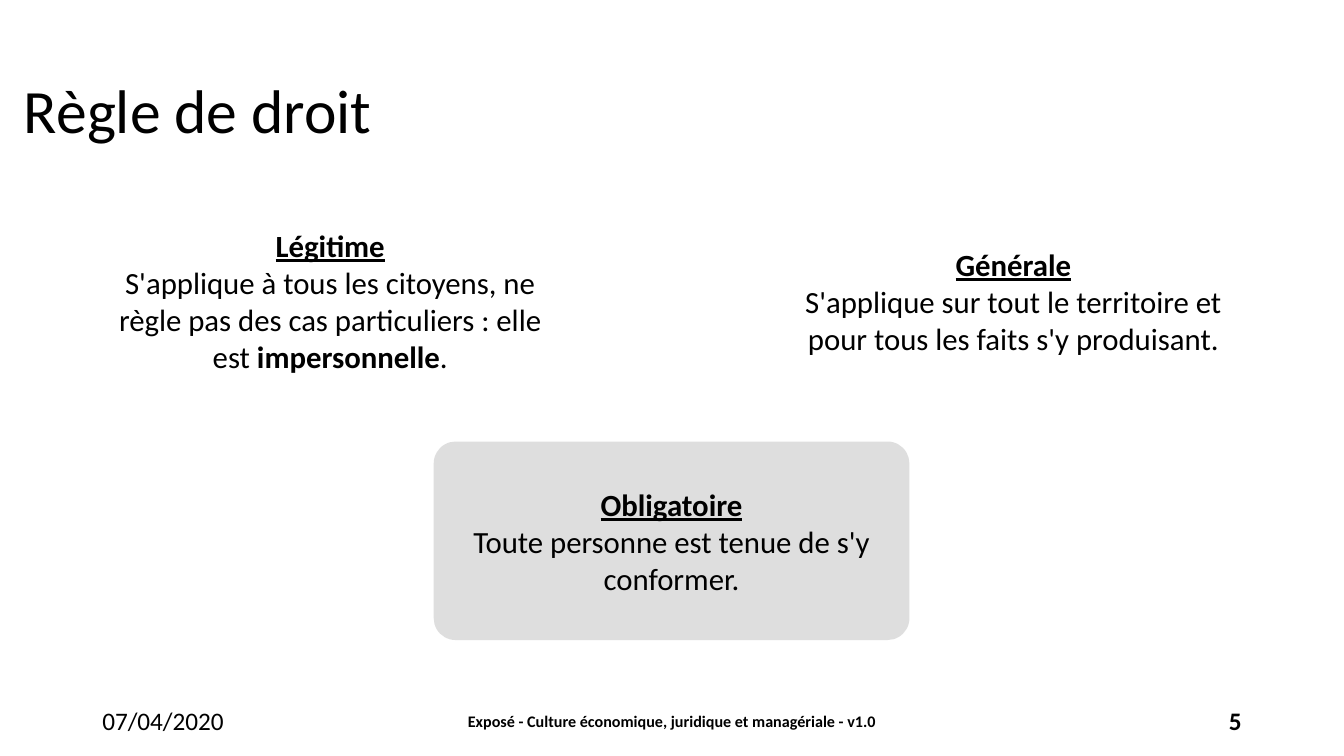
from lxml import etree
from pptx import Presentation
from pptx.dml.color import RGBColor
from pptx.enum.shapes import MSO_SHAPE
from pptx.enum.text import MSO_ANCHOR, MSO_AUTO_SIZE, PP_ALIGN
from pptx.oxml.ns import qn
from pptx.util import Pt

RECTANGLE, ROUNDED = MSO_SHAPE.RECTANGLE, MSO_SHAPE.ROUNDED_RECTANGLE
LEFT, CENTER, RIGHT = PP_ALIGN.LEFT, PP_ALIGN.CENTER, PP_ALIGN.RIGHT
MIDDLE = MSO_ANCHOR.MIDDLE
NO_AUTOFIT = MSO_AUTO_SIZE.NONE

WHITE, BLACK, GREY = "FFFFFF", "000000", "BFBFBF"
TITLE_STOPS = [(0, 0), (34, 10), (64, 50), (100, 50)]
FOOTER_TOP, FOOTER_HEIGHT = 500.4, 28.8
CARD_WIDTH, CARD_HEIGHT = 339.8, 141.8
HEADING = {"bold": True, "underline": True}
STRONG = {"bold": True}


def color(value):
    return RGBColor.from_string(value)


def add_alpha(color_element, percent):
    etree.SubElement(color_element, qn("a:alpha")).set("val", str(percent * 1000))


def fill_half_transparent(shape, value):
    shape.fill.solid()
    shape.fill.fore_color.rgb = color(value)
    add_alpha(shape.fill._xPr.find(".//" + qn("a:srgbClr")), 50)


def fill_fading_white(shape):
    shape.fill.gradient()
    shape.fill.gradient_angle = 0
    stops = shape.fill._xPr.find(".//" + qn("a:gsLst"))
    for stop in list(stops):
        stops.remove(stop)
    for position, alpha in TITLE_STOPS:
        stop = etree.SubElement(stops, qn("a:gs"), pos=str(position * 1000))
        add_alpha(etree.SubElement(stop, qn("a:srgbClr"), val=WHITE), alpha)


def prepare_frame(frame):
    frame.word_wrap = True
    frame.auto_size = NO_AUTOFIT
    frame.vertical_anchor = MIDDLE


def add_run(paragraph, text, size, style):
    run = paragraph.add_run()
    run.text = text
    run.font.color.rgb = color(BLACK)
    formats = {"name": "Calibri", "size": Pt(size), "bold": False, **style}
    for attribute, value in formats.items():
        setattr(run.font, attribute, value)


def add_panel(slide, kind, box, fill, paragraphs, size, align):
    panel = slide.shapes.add_shape(kind, *map(Pt, box))
    panel.shadow.inherit = False
    panel.line.fill.background()
    fill_half_transparent(panel, fill)
    frame = panel.text_frame
    prepare_frame(frame)
    for index, runs in enumerate(paragraphs):
        paragraph = frame.add_paragraph() if index else frame.paragraphs[0]
        paragraph.alignment = align
        for text, style in runs:
            add_run(paragraph, text, size, style)
    return panel


def set_title(slide, text):
    title = slide.shapes.title
    title.left, title.top, title.width, title.height = map(Pt, (0, 28.8, 960, 104.4))
    fill_fading_white(title)
    prepare_frame(title.text_frame)
    paragraph = title.text_frame.paragraphs[0]
    paragraph.alignment = LEFT
    paragraph.line_spacing = 0.9
    add_run(paragraph, text, 44, {})


def add_footer(slide, left, width, text, size, style, align):
    box = (left, FOOTER_TOP, width, FOOTER_HEIGHT)
    add_panel(slide, RECTANGLE, box, WHITE, [[(text, style)]], size, align)


def add_card(slide, left, top, corner, fill, heading, body):
    box = (left, top, CARD_WIDTH, CARD_HEIGHT)
    paragraphs = [[(heading, HEADING)], body]
    card = add_panel(slide, ROUNDED, box, fill, paragraphs, 22, CENTER)
    card.adjustments[0] = corner


def main():
    presentation = Presentation()
    presentation.slide_width, presentation.slide_height = Pt(960), Pt(540)
    slide = presentation.slides.add_slide(presentation.slide_layouts[5])

    set_title(slide, " Règle de droit")

    add_footer(slide, 66, 216, "07/04/2020", 18, {}, LEFT)
    add_footer(slide, 318, 324,
               "Exposé - Culture économique, juridique et managériale - v1.0",
               11.5, STRONG, CENTER)
    add_footer(slide, 678, 216, "5", 18, STRONG, RIGHT)

    add_card(slide, 66, 144, 0.11, WHITE, "Légitime", [
        ("S'applique à tous les citoyens, ne règle pas des cas particuliers : elle est ", {}),
        ("impersonnelle", STRONG),
        (".", {}),
    ])
    add_card(slide, 554, 144, 0.12, WHITE, "Générale", [
        ("S'applique sur tout le territoire et pour tous les faits s'y produisant.", {}),
    ])
    add_card(slide, 309.8, 315.4, 0.11, GREY, "Obligatoire", [
        ("Toute personne est tenue de s'y conformer.", {}),
    ])

    presentation.save("out.pptx")


if __name__ == "__main__":
    main()
